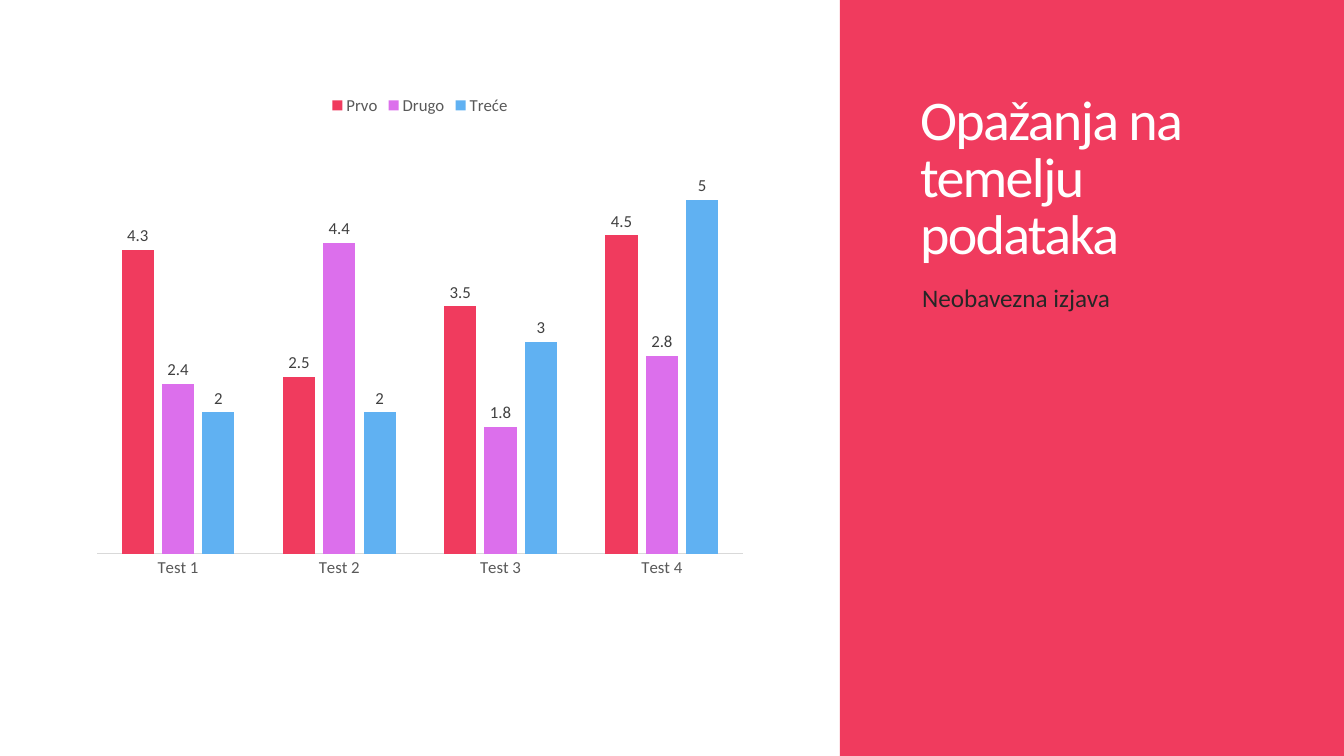
from dataclasses import dataclass
from lxml.etree import SubElement
from pptx import Presentation
from pptx.chart.data import CategoryChartData
from pptx.dml.color import RGBColor
from pptx.enum.chart import XL_CHART_TYPE, XL_LABEL_POSITION, XL_LEGEND_POSITION, XL_TICK_MARK
from pptx.enum.shapes import MSO_SHAPE
from pptx.enum.text import MSO_ANCHOR, MSO_AUTO_SIZE, PP_ALIGN
from pptx.oxml.ns import qn
from pptx.util import Pt

TITLE = "Opažanja na temelju podataka"
STATEMENT = "Neobavezna izjava"
TESTS = ["Test 1", "Test 2", "Test 3", "Test 4"]
SERIES = {
    "Prvo": (4.3, 2.5, 3.5, 4.5),
    "Drugo": (2.4, 4.4, 1.8, 2.8),
    "Treće": (2, 2, 3, 5),
}

SLIDE_W, SLIDE_H = 960, 540
PANEL_W = 360
TITLE_BOX = (650, 42.5, 266.5, 151)
BODY_BOX = (651.5, 198, 268, 246)
CHART_BOX = (60, 60, 480, 360)


@dataclass(frozen=True)
class Theme:
    font: str = "Calibri"
    panel: str = "F03B5E"
    title: str = "FFFFFF"
    body: str = "262626"
    axis_text: str = "595959"
    label_text: str = "404040"
    axis_line: str = "D9D9D9"
    series: tuple = ("F03B5E", "DC6FEC", "60B1F2")
    title_size: int = 40
    body_size: int = 18
    chart_size: int = 12


THEME = Theme()


def style_font(font, size, color):
    font.name = THEME.font
    font.size = Pt(size)
    font.bold = False
    font.color.rgb = RGBColor.from_string(color)


def paint(fill, color):
    fill.solid()
    fill.fore_color.rgb = RGBColor.from_string(color)


def add_panel(s):
    panel = s.shapes.add_shape(MSO_SHAPE.RECTANGLE, Pt(SLIDE_W - PANEL_W), 0, Pt(PANEL_W), Pt(SLIDE_H))
    panel.shadow.inherit = False
    paint(panel.fill, THEME.panel)
    panel.line.fill.background()
    s.shapes._spTree.insert(2, panel._element)


def fill_placeholder(sp, box, text, size, color, anchor):
    sp.left, sp.top, sp.width, sp.height = map(Pt, box)
    tf = sp.text_frame
    tf.text = text
    tf.word_wrap = True
    tf.auto_size = MSO_AUTO_SIZE.NONE
    tf.vertical_anchor = anchor
    p = tf.paragraphs[0]
    p.alignment = PP_ALIGN.LEFT
    style_font(p.runs[0].font, size, color)
    return p


def add_texts(s):
    p = fill_placeholder(s.shapes.title, TITLE_BOX, TITLE, THEME.title_size, THEME.title, MSO_ANCHOR.BOTTOM)
    p.line_spacing = 0.85
    p.runs[0].font._element.set("spc", "-120")

    p = fill_placeholder(s.placeholders[1], BODY_BOX, STATEMENT, THEME.body_size, THEME.body, MSO_ANCHOR.TOP)
    p.space_before = Pt(12)
    pPr = p._p.get_or_add_pPr()
    pPr.set("marL", "0")
    pPr.set("indent", "0")
    SubElement(pPr, qn("a:buNone"))


def add_results_chart(s):
    data = CategoryChartData()
    data.categories = TESTS
    for name, values in SERIES.items():
        data.add_series(name, values)
    chart = s.shapes.add_chart(XL_CHART_TYPE.COLUMN_CLUSTERED, *map(Pt, CHART_BOX), data).chart
    chart.has_title = False
    style_font(chart.font, THEME.chart_size, THEME.axis_text)

    chart.has_legend = True
    chart.legend.position = XL_LEGEND_POSITION.TOP
    chart.legend.include_in_layout = False
    style_font(chart.legend.font, THEME.chart_size, THEME.axis_text)

    axis = chart.category_axis
    axis.major_tick_mark = XL_TICK_MARK.NONE
    paint(axis.format.line.fill, THEME.axis_line)
    axis.format.line.width = Pt(0.75)
    style_font(axis.tick_labels.font, THEME.chart_size, THEME.axis_text)

    axis = chart.value_axis
    axis.minimum_scale, axis.maximum_scale = 0, 6
    axis.has_major_gridlines = False
    axis.visible = False

    plot = chart.plots[0]
    plot.gap_width = 150
    plot.overlap = -25
    plot.vary_by_categories = False
    for series, color in zip(plot.series, THEME.series):
        paint(series.format.fill, color)
        labels = series.data_labels
        labels.show_value = True
        labels.position = XL_LABEL_POSITION.OUTSIDE_END
        style_font(labels.font, THEME.chart_size, THEME.label_text)


def main():
    prs = Presentation()
    prs.slide_width, prs.slide_height = Pt(SLIDE_W), Pt(SLIDE_H)
    s = prs.slides.add_slide(prs.slide_layouts[1])
    add_panel(s)
    add_texts(s)
    add_results_chart(s)
    prs.save("out.pptx")


if __name__ == "__main__":
    main()
